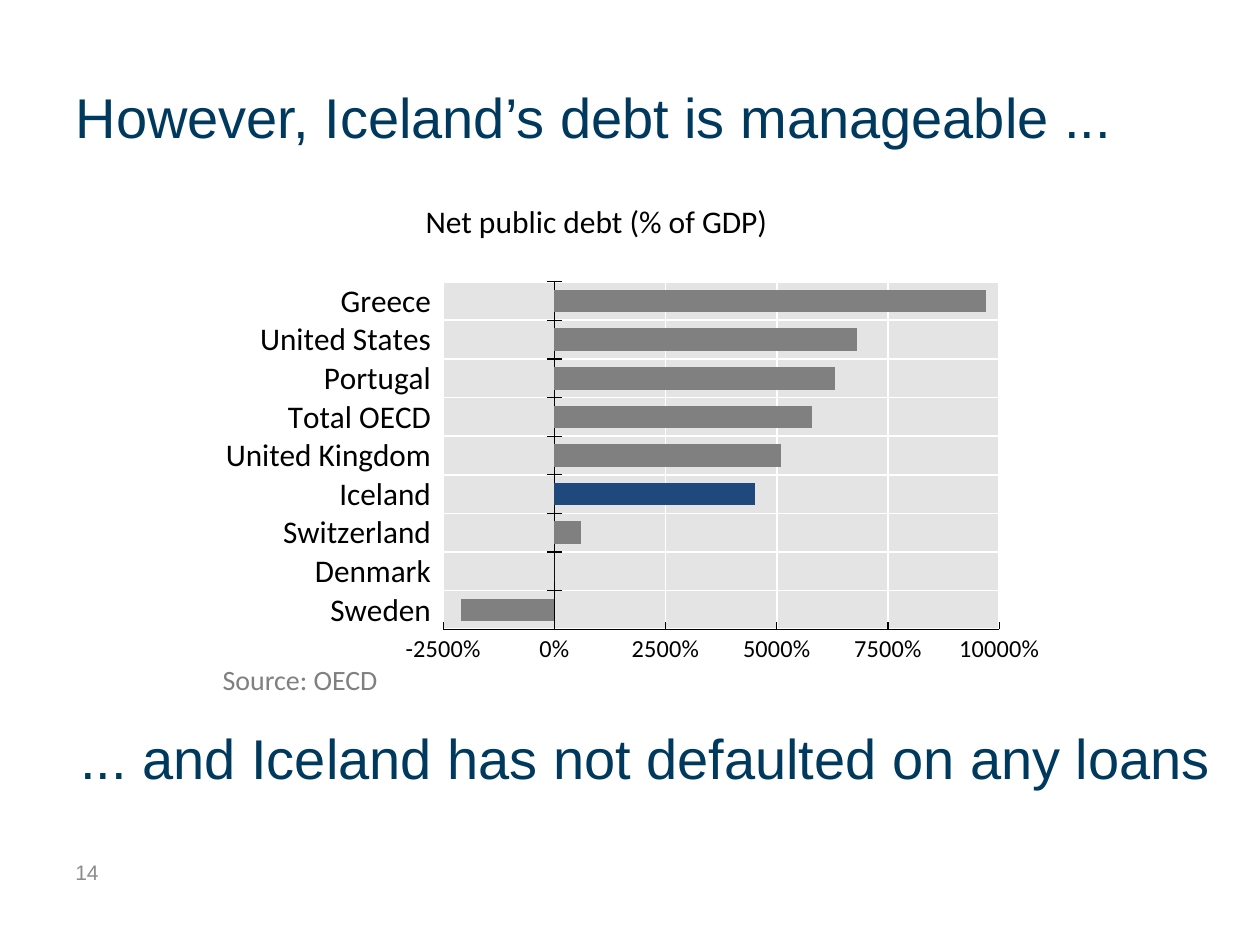
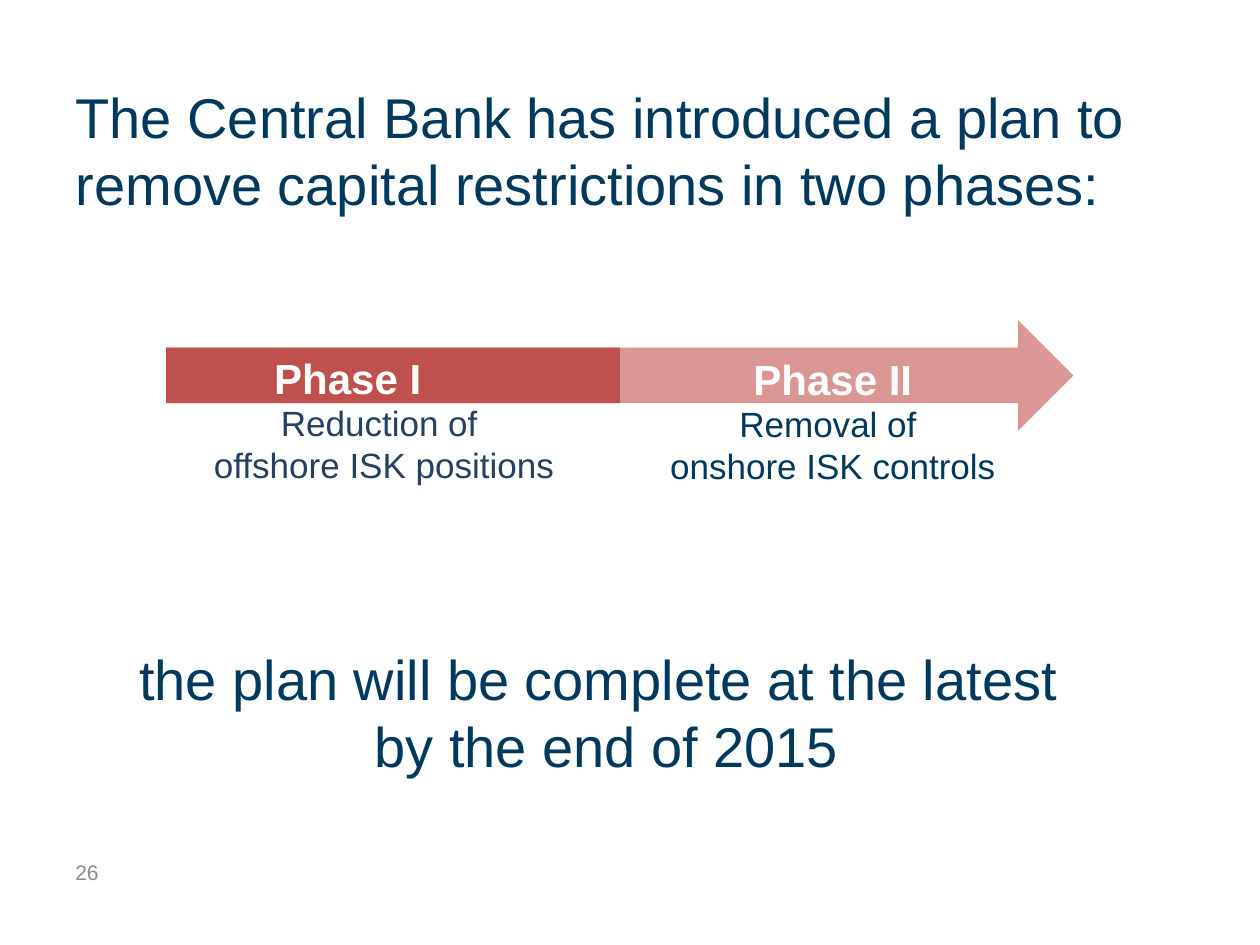
from dataclasses import dataclass

import pptx
import pptx.chart.data
import pptx.dml.color
import pptx.enum.chart
import pptx.enum.shapes
import pptx.enum.text
import pptx.oxml
import pptx.oxml.ns
import pptx.util
from pptx.util import Cm, Pt

Align = pptx.enum.text.PP_ALIGN
Anchor = pptx.enum.text.MSO_ANCHOR
Shape = pptx.enum.shapes.MSO_SHAPE


@dataclass(frozen=True)
class Theme:
    heading_font: str = "Arial"
    chart_font: str = "Calibri"
    navy: str = "00395E"
    slate: str = "254061"
    grey: str = "808080"
    number_grey: str = "8C8C8C"
    highlight: str = "1F497D"
    plot: str = "D9D9D9"
    red: str = "C0504D"
    pink: str = "D99694"
    white: str = "FFFFFF"
    black: str = "000000"
    title_size: int = 32
    phase_size: int = 24
    detail_size: int = 20
    caption_size: int = 18
    source_size: int = 16
    axis_size: int = 14
    number_size: int = 12


THEME = Theme()


@dataclass(frozen=True)
class Box:
    """A rectangle in centimetres."""
    left: float
    top: float
    width: float
    height: float

    def inner(self, left, top, width, height):
        return Box(self.left + left, self.top + top, width, height)

    def lengths(self):
        return [Cm(v) for v in (self.left, self.top, self.width, self.height)]


def rgb(value):
    return pptx.dml.color.RGBColor.from_string(value)


def style_font(font, size, color, name=THEME.heading_font, bold=False):
    font.name = name
    font.size = Pt(size)
    font.bold = bold
    font.color.rgb = rgb(color)


def fill_text(shape, text, size, color, align=Align.LEFT, anchor=Anchor.TOP, **font):
    frame = shape.text_frame
    frame.word_wrap = True
    frame.auto_size = pptx.enum.text.MSO_AUTO_SIZE.NONE
    frame.vertical_anchor = anchor
    paragraph = frame.paragraphs[0]
    paragraph.text = text
    paragraph.alignment = align
    style_font(paragraph.font, size, color, **font)


def add_text(slide, box, text, size, color, **style):
    fill_text(slide.shapes.add_textbox(*box.lengths()), text, size, color, **style)


def add_block(slide, box, preset, color):
    shape = slide.shapes.add_shape(preset, *box.lengths())
    shape.shadow.inherit = False
    shape.fill.solid()
    shape.fill.fore_color.rgb = rgb(color)
    shape.line.fill.background()


def add_titled_slide(presentation, title, title_box, number):
    slide = presentation.slides.add_slide(presentation.slide_layouts[5])
    placeholder = slide.shapes.title
    placeholder.left, placeholder.top, placeholder.width, placeholder.height = title_box.lengths()
    fill_text(placeholder, title, THEME.title_size, THEME.navy, anchor=Anchor.MIDDLE)
    add_text(slide, Box(1.27, 17.07, 5.92, 1.02), number, THEME.number_size,
             THEME.number_grey, anchor=Anchor.MIDDLE)
    return slide


def add_closing(slide, box, text, align=Align.LEFT):
    add_text(slide, box, text, THEME.title_size, THEME.navy,
             align=align, anchor=Anchor.MIDDLE)


# Debt chart
DEBT = {
    "Sweden": -21, "Denmark": 0, "Switzerland": 6, "Iceland": 45,
    "United Kingdom": 51, "Total OECD": 58, "Portugal": 63,
    "United States": 68, "Greece": 97,
}


def style_axis(axis, tick, label_size):
    axis.major_tick_mark = tick
    axis.minor_tick_mark = pptx.enum.chart.XL_TICK_MARK.NONE
    axis.format.line.color.rgb = rgb(THEME.black)
    axis.format.line.width = Pt(0.75)
    axis.has_major_gridlines = True
    grid = axis.major_gridlines.format.line
    grid.color.rgb = rgb(THEME.white)
    grid.width = Pt(1)
    style_font(axis.tick_labels.font, label_size, THEME.black, THEME.chart_font)


def style_plot_area(chart, x, y, width, height):
    """Fix the inner plot rectangle and give it a translucent fill."""
    plot_area = chart._chartSpace.chart.plotArea
    namespaces = pptx.oxml.ns.nsdecls("c", "a")
    for layout in plot_area.findall(pptx.oxml.ns.qn("c:layout")):
        plot_area.remove(layout)
    places = "".join(f'<c:{tag} val="{value}"/>' for tag, value in
                     (("x", x), ("y", y), ("w", width), ("h", height)))
    plot_area.insert(0, pptx.oxml.parse_xml(
        f'<c:layout {namespaces}><c:manualLayout><c:layoutTarget val="inner"/>'
        f'<c:xMode val="edge"/><c:yMode val="edge"/>{places}'
        '</c:manualLayout></c:layout>'))
    plot_area.append(pptx.oxml.parse_xml(
        f'<c:spPr {namespaces}><a:solidFill><a:srgbClr val="{THEME.plot}">'
        '<a:alpha val="71000"/></a:srgbClr></a:solidFill>'
        '<a:ln><a:noFill/></a:ln></c:spPr>'))


def add_debt_chart(slide, box):
    data = pptx.chart.data.CategoryChartData(number_format="0%")
    data.categories = list(DEBT)
    data.add_series("Series 1", list(DEBT.values()))
    chart = slide.shapes.add_chart(
        pptx.enum.chart.XL_CHART_TYPE.BAR_CLUSTERED, *box.lengths(), data).chart
    chart.has_title = False
    chart.has_legend = False
    style_font(chart.font, THEME.axis_size, THEME.black, THEME.chart_font)

    # Bars
    plot = chart.plots[0]
    plot.gap_width = 70
    plot.vary_by_categories = False
    series = plot.series[0]
    series.invert_if_negative = False
    iceland = series.points[list(DEBT).index("Iceland")]
    for bar, color in ((series, THEME.grey), (iceland, THEME.highlight)):
        bar.format.fill.solid()
        bar.format.fill.fore_color.rgb = rgb(color)

    # Axes: values run along the top, country names stay at the left
    ticks = pptx.enum.chart.XL_TICK_MARK
    countries, shares = chart.category_axis, chart.value_axis
    style_axis(countries, ticks.CROSS, THEME.caption_size)
    style_axis(shares, ticks.INSIDE, THEME.axis_size)
    countries.tick_label_position = pptx.enum.chart.XL_TICK_LABEL_POSITION.LOW
    countries.crosses = pptx.enum.chart.XL_AXIS_CROSSES.MAXIMUM
    shares.minimum_scale, shares.maximum_scale, shares.major_unit = -25, 100, 25
    shares.tick_labels.number_format = "0%"
    shares.tick_labels.number_format_is_linked = False
    style_plot_area(chart, 0.26, 0.07, 0.69, 0.72)


def add_debt_panel(slide, box):
    add_debt_chart(slide, box.inner(0.31, 1.06, 16.41, 9.73))
    add_text(slide, box.inner(4.09, 0, 8.41, 1.19), "Net public debt (% of GDP)",
             THEME.caption_size, THEME.black, name=THEME.chart_font)
    add_text(slide, box.inner(0, 9.29, 4.11, 0.74), "Source: OECD",
             THEME.source_size, THEME.grey, name=THEME.chart_font)


# Phase timeline
def add_phase(slide, box, label, label_width, detail, color):
    add_text(slide, box.inner(0, 0, label_width, 1.2), label, THEME.phase_size,
             THEME.white, align=Align.CENTER, bold=True)
    add_text(slide, box.inner(0, 0.97, box.width, 2), detail, THEME.detail_size,
             color, align=Align.CENTER)


def add_timeline(slide, box):
    add_block(slide, box, Shape.RIGHT_ARROW, THEME.pink)
    add_block(slide, box.inner(0, box.height / 4, box.width / 2, box.height / 2),
              Shape.RECTANGLE, THEME.red)
    add_phase(slide, box.inner(-1.04, 0.54, 10.87, 3), "Phase I", 9.4,
              "Reduction of \noffshore ISK positions", THEME.slate)
    add_phase(slide, box.inner(8.87, 0.56, 9.14, 3), "Phase II", 9.14,
              "Removal of \nonshore ISK controls", THEME.navy)


def build_debt_slide(presentation):
    slide = add_titled_slide(presentation, "However, Iceland’s debt is manageable ...",
                             Box(1.27, 0.76, 22.86, 3.18), "14")
    add_debt_panel(slide, Box(4.24, 3.94, 16.72, 10.03))
    add_closing(slide, Box(1.37, 13.67, 24.13, 3.18),
                "... and Iceland has not defaulted on any loans")


def build_plan_slide(presentation):
    slide = add_titled_slide(
        presentation,
        "The Central Bank has introduced a plan to remove capital restrictions in two phases:",
        Box(1.27, 1.42, 22.86, 3.18), "26")
    add_timeline(slide, Box(3.35, 6.45, 18.29, 2.24))
    add_closing(slide, Box(0.15, 11.28, 24.16, 6.12),
                "the plan will be complete at the latest \nby the end of 2015", Align.CENTER)


def main():
    presentation = pptx.Presentation()
    presentation.slide_width, presentation.slide_height = Cm(25.4), Cm(19.05)
    build_debt_slide(presentation)
    build_plan_slide(presentation)
    presentation.save("out.pptx")


if __name__ == "__main__":
    main()
